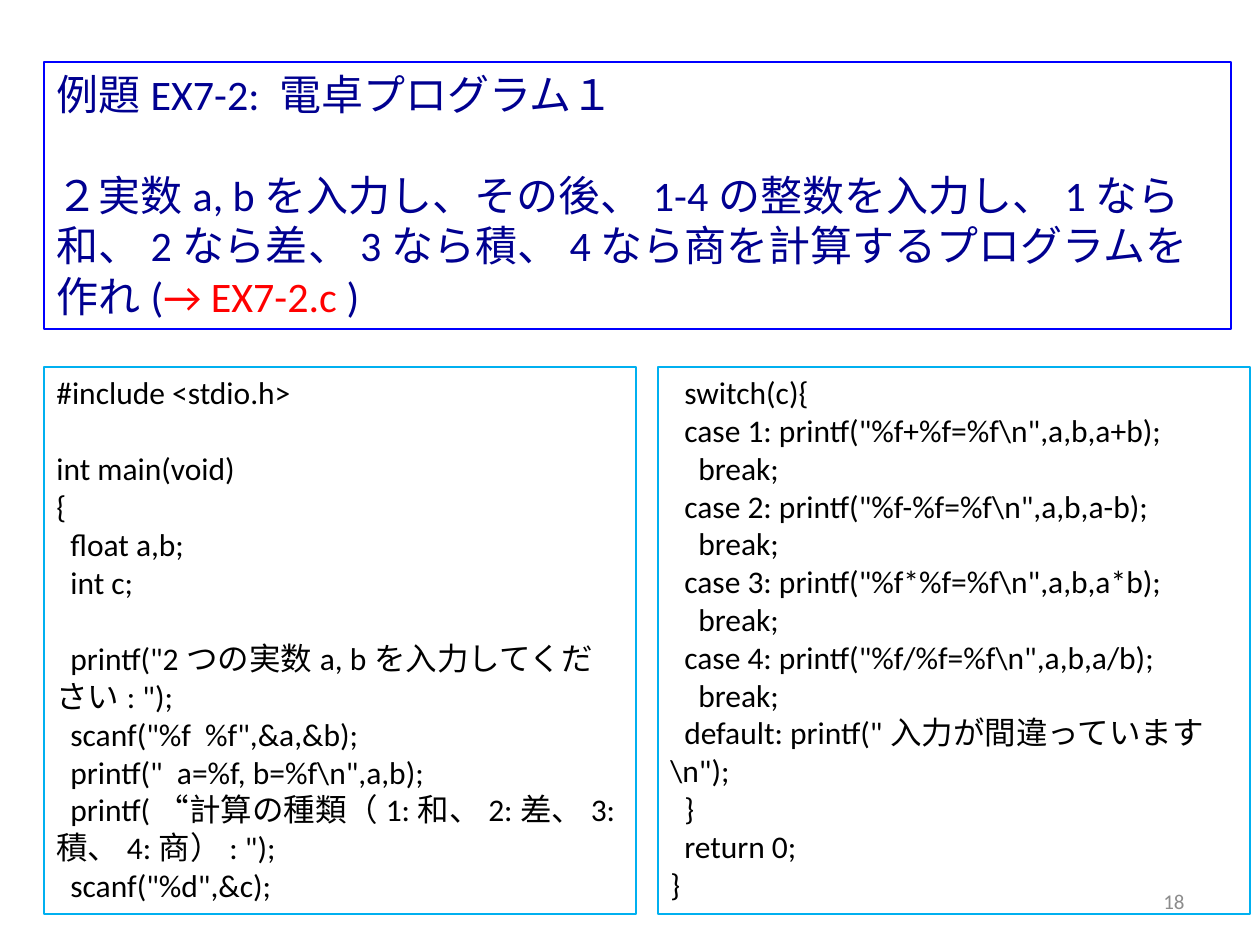
from pptx import Presentation
from pptx.dml.color import RGBColor
from pptx.enum.text import MSO_ANCHOR, MSO_AUTO_SIZE, PP_ALIGN
from pptx.util import Emu, Pt

TOP, MIDDLE = MSO_ANCHOR.TOP, MSO_ANCHOR.MIDDLE
LEFT, RIGHT = PP_ALIGN.LEFT, PP_ALIGN.RIGHT
NO_FIT = MSO_AUTO_SIZE.NONE

NAVY = RGBColor(0x00, 0x00, 0x90)
BLUE = RGBColor(0x00, 0x00, 0xFF)
RED = RGBColor(0xFF, 0x00, 0x00)
CYAN = RGBColor(0x00, 0xB0, 0xF0)
BLACK = RGBColor(0x00, 0x00, 0x00)
GRAY = RGBColor(0x8C, 0x8C, 0x8C)

TITLE_ONLY = 5
WIDTH, HEIGHT = 1260, 945

TASK = [
    [("例題EX7-2: 電卓プログラム１", NAVY)],
    [("２実数a, bを入力し、その後、1-4の整数を入力し、1なら和、"
      "2なら差、3なら積、4なら商を計算するプログラムを作れ(", NAVY),
     ("→ EX7-2.c ", RED), (")", NAVY)],
]

# The two halves of the program; an empty line becomes paragraph spacing
INPUT = r'''#include <stdio.h>

int main(void)
{
  float a,b;
  int c;

  printf("2つの実数a, bを入力してください: ");
  scanf("%f  %f",&a,&b);
  printf("  a=%f, b=%f\n",a,b);
  printf(“計算の種類（1:和、2:差、3:積、4:商）: ");
  scanf("%d",&c);'''

SWITCH = r'''  switch(c){
  case 1: printf("%f+%f=%f\n",a,b,a+b);
    break;
  case 2: printf("%f-%f=%f\n",a,b,a-b);
    break;
  case 3: printf("%f*%f=%f\n",a,b,a*b);
    break;
  case 4: printf("%f/%f=%f\n",a,b,a/b);
    break;
  default: printf("入力が間違っています\n");
  }
  return 0;
}'''


def px(n):
    return Emu(round(n * 914400 / 126))


class Deck:
    face = "Calibri"
    space = 7  # px, width of one leading space in code

    def __init__(self):
        self.prs = Presentation()
        self.prs.slide_width = px(WIDTH)
        self.prs.slide_height = px(HEIGHT)
        layout = self.prs.slide_layouts[TITLE_ONLY]
        self.slide = self.prs.slides.add_slide(layout)

    def frame(self, shape, line=None, anchor=TOP):
        if line is not None:
            shape.line.color.rgb = line
            shape.line.width = Pt(0.75)
        text = shape.text_frame
        text.word_wrap = True
        text.auto_size = NO_FIT
        text.vertical_anchor = anchor
        return text

    def box(self, x, y, w, h, line=None, anchor=TOP):
        shape = self.slide.shapes.add_textbox(px(x), px(y), px(w), px(h))
        return self.frame(shape, line, anchor)

    def para(self, text, first, size, color, align=LEFT):
        par = text.paragraphs[0] if first else text.add_paragraph()
        par.alignment = align
        par.font.name = self.face
        par.font.size = Pt(size)
        if color is not None:
            par.font.color.rgb = color
        return par

    def title(self, x, y, w, h, rows, gap):
        shape = self.slide.shapes.title
        shape.left, shape.top = px(x), px(y)
        shape.width, shape.height = px(w), px(h)
        text = self.frame(shape, BLUE)
        for i, row in enumerate(rows):
            par = self.para(text, i == 0, 24, None)
            par.space_before = Pt(gap if i else 0)
            for words, color in row:
                run = par.add_run()
                run.text = words
                run.font.color.rgb = color

    def code(self, x, y, w, h, source, gap):
        text = self.box(x, y, w, h, CYAN)
        first, blank = True, False
        for line in source.splitlines():
            if not line:
                blank = True
                continue
            par = self.para(text, first, 18, BLACK)
            par.text = line.lstrip()
            par.space_before = Pt(gap if blank else 0)
            # First-line indent, so wrapped text returns to the margin
            depth = len(line) - len(par.text)
            props = par._p.get_or_add_pPr()
            props.set("marL", "0")
            props.set("indent", str(px(depth * self.space)))
            first, blank = False, False

    def number(self, x, y, w, h, words):
        text = self.box(x, y, w, h, anchor=MIDDLE)
        self.para(text, True, 12, GRAY, RIGHT).text = words

    def save(self):
        self.prs.save("out.pptx")


def main():
    deck = Deck()
    # Task statement
    deck.title(44, 62, 1187, 267, TASK, gap=29)
    # Slide number
    deck.number(903, 876, 294, 50, "18")
    # Program in two columns
    for col, source in enumerate((INPUT, SWITCH)):
        deck.code(44 + col * 614, 367, 592, 547, source, gap=22)
    deck.save()


if __name__ == "__main__":
    main()
